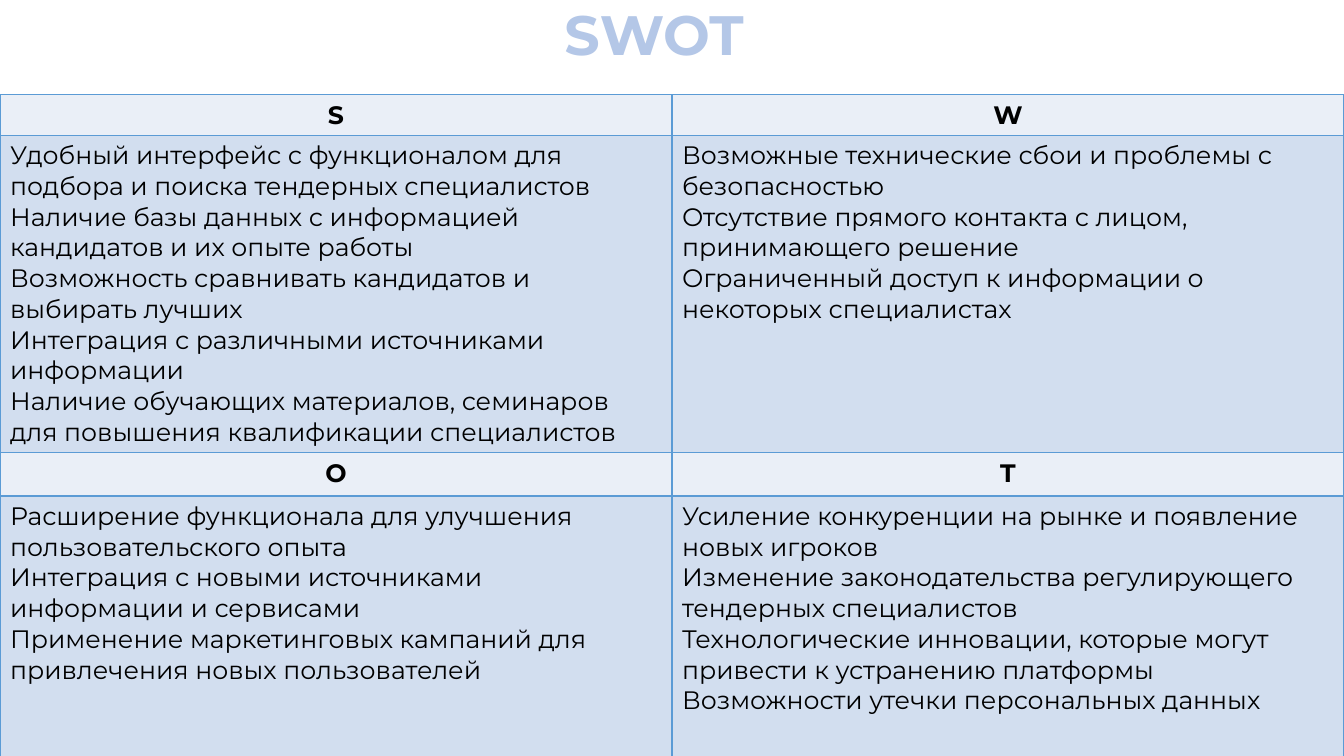
from lxml import etree
from pptx import Presentation
from pptx.dml.color import RGBColor
from pptx.enum.text import MSO_ANCHOR, PP_ALIGN
from pptx.oxml.ns import qn
from pptx.util import Inches, Pt

TITLE = "SWOT"
QUADRANTS = [
    [
        ("S", [
            "Удобный интерфейс с функционалом для подбора и поиска тендерных специалистов",
            "Наличие базы данных с информацией кандидатов и их опыте работы",
            "Возможность сравнивать кандидатов и выбирать лучших",
            "Интеграция с различными источниками информации",
            "Наличие обучающих материалов, семинаров для повышения квалификации специалистов",
        ]),
        ("W", [
            "Возможные технические сбои и проблемы с безопасностью",
            "Отсутствие прямого контакта с лицом, принимающего решение",
            "Ограниченный доступ к информации о некоторых специалистах",
        ]),
    ],
    [
        ("O", [
            "Расширение функционала для улучшения пользовательского опыта",
            "Интеграция с новыми источниками информации и сервисами",
            "Применение маркетинговых кампаний для привлечения новых пользователей",
        ]),
        ("T", [
            "Усиление конкуренции на рынке и появление новых игроков",
            "Изменение законодательства регулирующего тендерных специалистов",
            "Технологические инновации, которые могут привести к устранению платформы",
            "Возможности утечки персональных данных",
        ]),
    ],
]
PAGE_WIDTH, PAGE_HEIGHT = 13.33, 7.5
TABLE_TOP = 0.94
ROW_HEIGHTS = [0.4, 3.15, 0.43, 2.64]


class Theme:
    font = "Montserrat"
    title_size, cell_size = 39.6, 18
    title, ink = "B4C7E7", "000000"
    heading_fill, body_fill = "EAEFF7", "D2DEEF"
    border, border_width = "5B9BD5", 1


def style(para, size, color, bold):
    para.font.name = Theme.font
    para.font.size = Pt(size)
    para.font.bold = bold
    para.font.color.rgb = RGBColor.from_string(color)


def add_borders(cell):
    """Outline all four sides; border elements must precede the cell fill."""
    properties = cell._tc.get_or_add_tcPr()
    for index, side in enumerate(("lnL", "lnR", "lnT", "lnB")):
        line = etree.Element(qn(f"a:{side}"), w=str(Pt(Theme.border_width)))
        fill = etree.SubElement(line, qn("a:solidFill"))
        etree.SubElement(fill, qn("a:srgbClr"), val=Theme.border)
        properties.insert(index, line)


def fill_cell(cell, lines, fill, heading):
    cell.fill.solid()
    cell.fill.fore_color.rgb = RGBColor.from_string(fill)
    add_borders(cell)
    cell.text_frame.text = "\n".join(lines)
    for para in cell.text_frame.paragraphs:
        style(para, Theme.cell_size, Theme.ink, heading)
        para.alignment = PP_ALIGN.CENTER if heading else PP_ALIGN.LEFT


def add_title(page):
    box = page.shapes.add_textbox(Inches(5.5), 0, Inches(2.98), Inches(0.75))
    frame = box.text_frame
    frame.word_wrap = True
    frame.vertical_anchor = MSO_ANCHOR.MIDDLE
    para = frame.paragraphs[0]
    para.text = TITLE
    para.line_spacing = 0.9
    style(para, Theme.title_size, Theme.title, True)


def add_swot_table(page):
    columns = len(QUADRANTS[0])
    table = page.shapes.add_table(
        len(ROW_HEIGHTS), columns, 0, Inches(TABLE_TOP),
        Inches(PAGE_WIDTH), Inches(sum(ROW_HEIGHTS))).table
    for row, height in zip(table.rows, ROW_HEIGHTS):
        row.height = Inches(height)
    for band, quadrants in enumerate(QUADRANTS):
        for column, (letter, points) in enumerate(quadrants):
            fill_cell(table.cell(2 * band, column), [letter], Theme.heading_fill, True)
            fill_cell(table.cell(2 * band + 1, column), points, Theme.body_fill, False)


def main():
    deck = Presentation()
    deck.slide_width, deck.slide_height = Inches(PAGE_WIDTH), Inches(PAGE_HEIGHT)
    page = deck.slides.add_slide(deck.slide_layouts[6])
    add_title(page)
    add_swot_table(page)
    deck.save("out.pptx")


if __name__ == "__main__":
    main()
